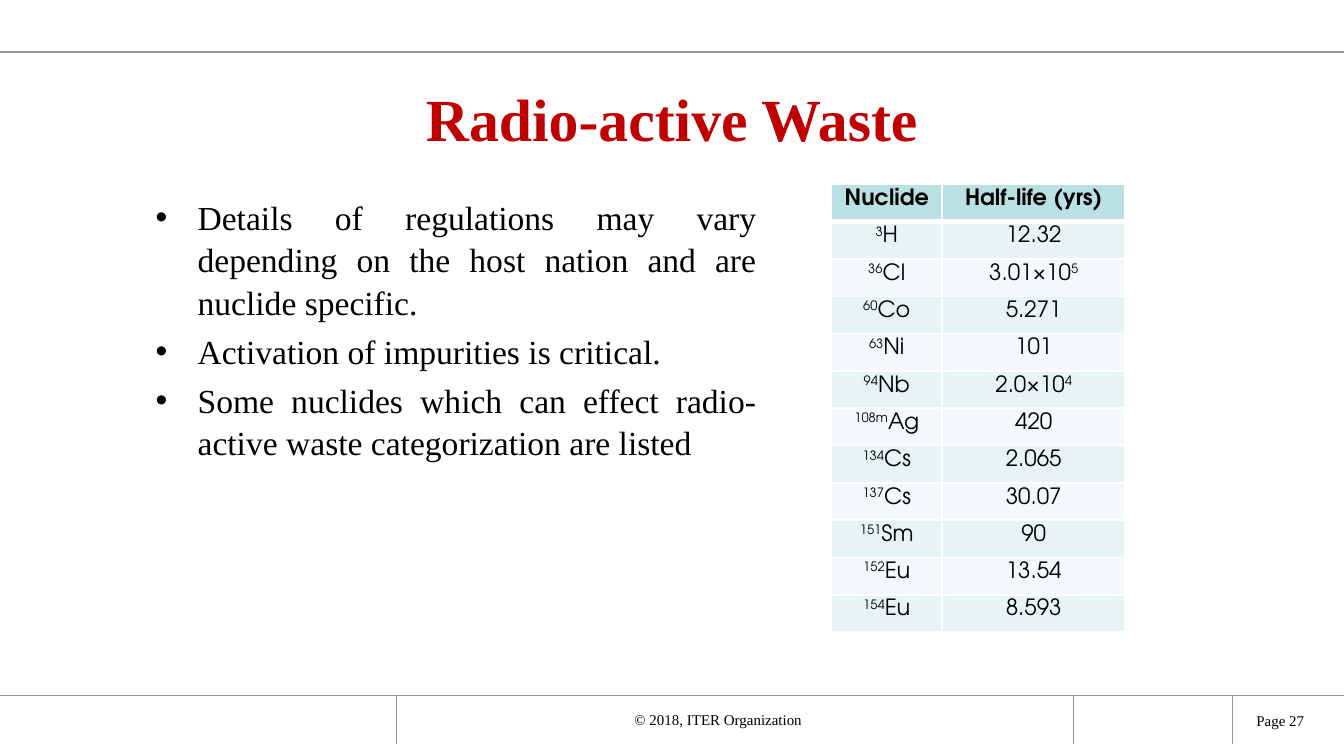
from pptx import Presentation
from pptx.dml.color import RGBColor
from pptx.enum.text import MSO_ANCHOR as Anchor, PP_ALIGN as Align
from pptx.oxml.ns import qn
from pptx.util import Pt
from lxml.etree import SubElement

TITLE = "Radio-active Waste"
POINTS = [
    "Details of regulations may vary depending on the host nation and are nuclide specific.",
    "Activation of impurities is critical.",
    "Some nuclides which can effect radio-active waste categorization are listed",
]
HEADINGS = ["Nuclide", "Half-life (yrs)"]
# mass number, symbol, half-life, power of ten
NUCLIDES = [
    ("3", "H", "12.32", ""),
    ("36", "Cl", "3.01×10", "5"),
    ("60", "Co", "5.271", ""),
    ("63", "Ni", "101", ""),
    ("94", "Nb", "2.0×10", "4"),
    ("108m", "Ag", "420", ""),
    ("134", "Cs", "2.065", ""),
    ("137", "Cs", "30.07", ""),
    ("151", "Sm", "90", ""),
    ("152", "Eu", "13.54", ""),
    ("154", "Eu", "8.593", ""),
]
# text, left, top, width, height, side inset, alignment
FOOTERS = [
    ("© 2018, ITER Organization\t", 212.4, 380.9, 362.9, 9.4, 2.9, Align.CENTER),
    ("Page 27", 666, 377.3, 46.1, 17.3, 7.2, Align.LEFT),
]
WIDTH, HEIGHT = 720, 405
FOOTER_TOP, FOOTER_END = 372.5, 398.5
# x1, y1, x2, y2, line width
RULES = [(0, 28, WIDTH, 28, 1.25), (0, FOOTER_TOP, WIDTH, FOOTER_TOP, 0.5)]
RULES += [(x, FOOTER_TOP, x, FOOTER_END, 0.5) for x in (660.2, 575.3, 212.4)]
COLUMNS, ROW_HEIGHT = (59.5, 98), 20
SERIF, SANS = "Times New Roman", "TeX Gyre Adventor"


def rgb(value):
    return RGBColor.from_string(value)


def assign(target, **values):
    for name, value in values.items():
        setattr(target, name, value)


def add_span(para, text, size, font=SERIF, color="000000", bold=False, raised=False):
    span = para.add_run()
    span.text = text
    assign(span.font, size=Pt(size), name=font, bold=bold)
    span.font.color.rgb = rgb(color)
    if raised:
        span.font._element.set("baseline", "30000")


def add_box(left, top, width, height, inset=7.2, inset_y=3.6, anchor=Anchor.TOP):
    frame = slide.shapes.add_textbox(Pt(left), Pt(top), Pt(width), Pt(height)).text_frame
    assign(frame, word_wrap=True, vertical_anchor=anchor,
           margin_left=Pt(inset), margin_right=Pt(inset),
           margin_top=Pt(inset_y), margin_bottom=Pt(inset_y))
    return frame


def add_bullet(para, indent):
    props = para._p.get_or_add_pPr()
    props.set("marL", str(Pt(indent)))
    props.set("indent", str(-Pt(indent)))
    SubElement(props, qn("a:buFont"), typeface="Arial")
    SubElement(props, qn("a:buChar"), char="•")


def add_borders(cell, bottom):
    props = cell._tc.get_or_add_tcPr()
    for side, width in zip("LRTB", (1, 1, 1, bottom)):
        line = SubElement(props, qn(f"a:ln{side}"), w=str(Pt(width)))
        SubElement(SubElement(line, qn("a:solidFill")), qn("a:srgbClr"), val="FFFFFF")


def fill_cell(cell, spans, color, bold=False, bottom=1):
    """Spans are (text, raised) pairs; empty ones are skipped."""
    add_borders(cell, bottom)
    cell.fill.solid()
    cell.fill.fore_color.rgb = rgb(color)
    assign(cell, margin_left=Pt(5), margin_right=Pt(5),
           margin_top=Pt(2.5), margin_bottom=Pt(2.5))
    para = cell.text_frame.paragraphs[0]
    para.alignment = Align.CENTER
    for text, raised in spans:
        if text:
            add_span(para, text, 12, SANS, bold=bold, raised=raised)


deck = Presentation()
assign(deck, slide_width=Pt(WIDTH), slide_height=Pt(HEIGHT))
slide = deck.slides.add_slide(deck.slide_layouts[5])

for x1, y1, x2, y2, weight in RULES:
    rule = slide.shapes.add_connector(1, Pt(x1), Pt(y1), Pt(x2), Pt(y2))
    rule.line.width = Pt(weight)
    rule.line.color.rgb = rgb("969696")
    SubElement(rule._element.spPr, qn("a:effectLst"))

for text, left, top, width, height, inset, align in FOOTERS:
    frame = add_box(left, top, width, height, inset, 0, Anchor.MIDDLE)
    para = frame.paragraphs[0]
    para.alignment = align
    add_span(para, text, 8)

title = slide.shapes.title
assign(title, left=Pt(45), top=Pt(36), width=Pt(630), height=Pt(54))
title.text_frame.vertical_anchor = Anchor.MIDDLE
heading = title.text_frame.paragraphs[0]
heading.alignment = Align.CENTER
add_span(heading, TITLE, 32, color="C00000", bold=True)

body = add_box(76.3, 100.8, 336.2, 157.7)
for index, point in enumerate(POINTS):
    para = body.add_paragraph() if index else body.paragraphs[0]
    assign(para, alignment=Align.JUSTIFY, line_spacing=1.05)
    if index:
        para.space_before = Pt(3.6)
    add_bullet(para, 22.5)
    add_span(para, point, 18)

row_count = len(NUCLIDES) + 1
table = slide.shapes.add_table(row_count, len(COLUMNS), Pt(445.3), Pt(98.8),
                               Pt(sum(COLUMNS)), Pt(row_count * ROW_HEIGHT)).table
for column, width in zip(table.columns, COLUMNS):
    column.width = Pt(width)
for row in table.rows:
    row.height = Pt(ROW_HEIGHT)
for col, text in enumerate(HEADINGS):
    fill_cell(table.cell(0, col), [(text, False)], "BBE0E3", bold=True, bottom=3)
for row, (mass, symbol, half_life, power) in enumerate(NUCLIDES, 1):
    color = "E7F3F4" if row % 2 else "F3F9FA"
    fill_cell(table.cell(row, 0), [(mass, True), (symbol, False)], color)
    fill_cell(table.cell(row, 1), [(half_life, False), (power, True)], color)

deck.save("out.pptx")
